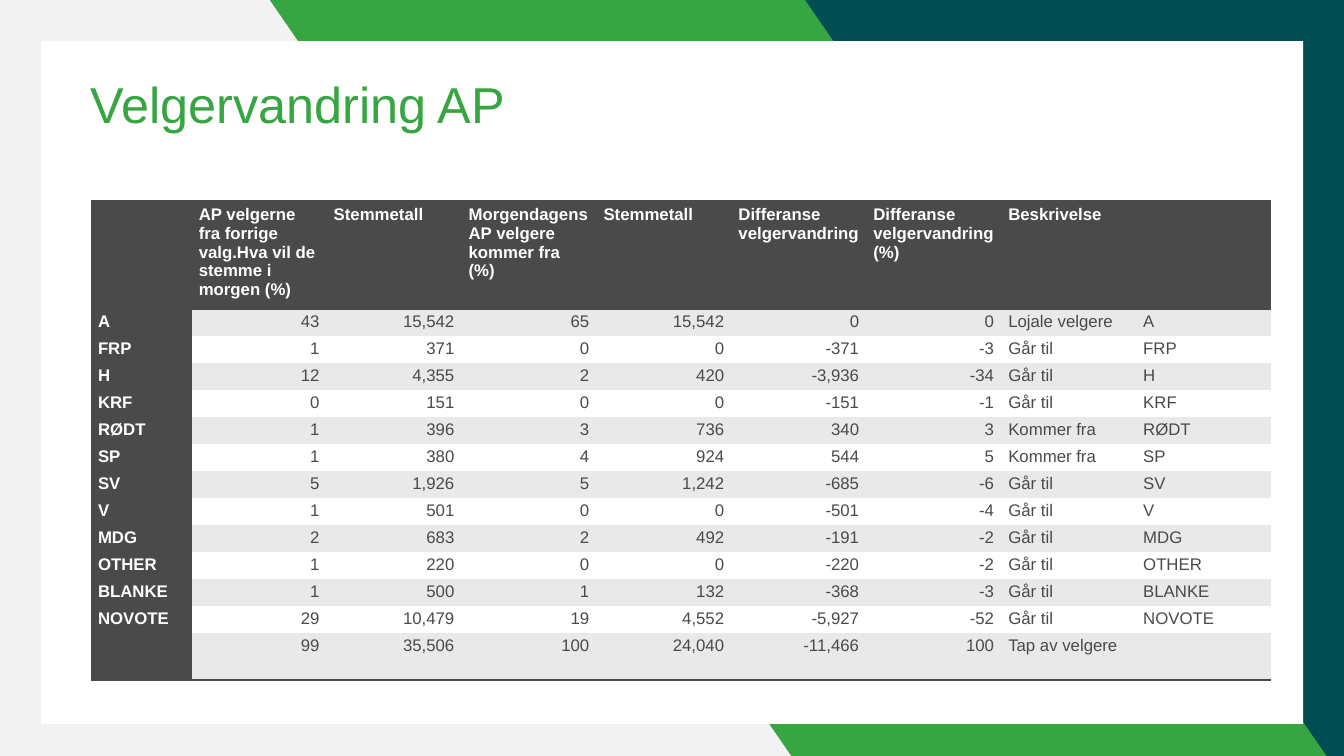
from lxml import etree
from pptx import Presentation
from pptx.dml.color import RGBColor
from pptx.enum.shapes import MSO_SHAPE
from pptx.enum.text import MSO_ANCHOR, MSO_AUTO_SIZE, PP_ALIGN
from pptx.oxml.ns import qn
from pptx.util import Cm, Pt

RECT, SLANT = MSO_SHAPE.RECTANGLE, MSO_SHAPE.PARALLELOGRAM
LEFT, CENTER, RIGHT = PP_ALIGN.LEFT, PP_ALIGN.CENTER, PP_ALIGN.RIGHT
FONT = "Arial"
PLAIN_STYLE = "{2D5ABB26-0587-4C30-8999-92F81FD0307C}"
COLORS = {"green": "37A541", "teal": "004E54", "light": "F2F2F2",
          "white": "FFFFFF", "dark": "4A4A4A", "band": "E9E9E9"}

TITLE = "Velgervandring AP"
BACKDROP = [
    (RECT, "light", 0, 0, 33.87, 19.15),
    (RECT, "teal", 20.17, 0, 13.7, 19.15),
    (SLANT, "green", 6.8, 0, 26.7, 19.15),
    (RECT, "white", 1.04, 1.04, 31.8, 17.2),
]
HEADER = ("", "AP velgerne fra forrige valg.Hva vil de stemme i morgen (%)",
          "Stemmetall", "Morgendagens AP velgere kommer fra (%)", "Stemmetall",
          "Differanse velgervandring", "Differanse velgervandring (%)",
          "Beskrivelse", "")
VOTERS = [
    ("A", "43", "15,542", "65", "15,542", "0", "0", "Lojale velgere", "A"),
    ("FRP", "1", "371", "0", "0", "-371", "-3", "Går til", "FRP"),
    ("H", "12", "4,355", "2", "420", "-3,936", "-34", "Går til", "H"),
    ("KRF", "0", "151", "0", "0", "-151", "-1", "Går til", "KRF"),
    ("RØDT", "1", "396", "3", "736", "340", "3", "Kommer fra", "RØDT"),
    ("SP", "1", "380", "4", "924", "544", "5", "Kommer fra", "SP"),
    ("SV", "5", "1,926", "5", "1,242", "-685", "-6", "Går til", "SV"),
    ("V", "1", "501", "0", "0", "-501", "-4", "Går til", "V"),
    ("MDG", "2", "683", "2", "492", "-191", "-2", "Går til", "MDG"),
    ("OTHER", "1", "220", "0", "0", "-220", "-2", "Går til", "OTHER"),
    ("BLANKE", "1", "500", "1", "132", "-368", "-3", "Går til", "BLANKE"),
    ("NOVOTE", "29", "10,479", "19", "4,552", "-5,927", "-52", "Går til", "NOVOTE"),
    ("", "99", "35,506", "100", "24,040", "-11,466", "100", "Tap av velgere", ""),
]
NUMBER_COLS = range(1, 7)
COL_WIDTHS = [2.54] + [3.4] * 8
ROW_HEIGHTS = [2.7] + [0.68] * 12 + [1.19]


def rgb(name):
    return RGBColor.from_string(COLORS[name])


def style_font(font, size, color, bold=False):
    font.name, font.size, font.bold = FONT, Pt(size), bold
    font.color.rgb = rgb(color)


def add_backdrop(s):
    for kind, color, x, y, w, h in BACKDROP:
        sp = s.shapes.add_shape(kind, Cm(x), Cm(y), Cm(w), Cm(h))
        sp.shadow.inherit = False
        sp.fill.solid()
        sp.fill.fore_color.rgb = rgb(color)
        sp.line.fill.background()
        if kind == SLANT:
            sp.adjustments[0] = 0.69
            sp._element.spPr.find(qn("a:xfrm")).set("flipH", "1")


def set_title(s):
    title = s.shapes.title
    s.shapes._spTree.append(title._element)
    title.left, title.top, title.width, title.height = Cm(1.5), Cm(1.4), Cm(12), Cm(2.1)
    tf = title.text_frame
    tf.text = TITLE
    tf.auto_size = MSO_AUTO_SIZE.NONE
    tf.vertical_anchor = MSO_ANCHOR.BOTTOM
    tf.margin_left = tf.margin_right = 0
    tf.margin_top = tf.margin_bottom = Cm(0.1)
    p = tf.paragraphs[0]
    p.alignment, p.line_spacing = CENTER, 0.9
    style_font(p.runs[0].font, 36, "green")


def add_border(cell, side):
    tag = qn(f"a:ln{side}")
    ln = etree.SubElement(cell._tc.get_or_add_tcPr(), tag, w=str(Pt(2)))
    fill = etree.SubElement(ln, qn("a:solidFill"))
    etree.SubElement(fill, qn("a:srgbClr"), val=COLORS["dark"])


def format_cell(cell, text, row, col):
    heading = row == 0 or col == 0
    sides = "TB" if row == 0 else "B" if row == len(VOTERS) else ""
    for side in sides:
        add_border(cell, side)
    cell.fill.solid()
    cell.fill.fore_color.rgb = rgb("dark" if heading else "band" if row % 2 else "white")
    cell.margin_left = cell.margin_right = Cm(0.18)
    cell.margin_top = cell.margin_bottom = Cm(0.09)
    cell.text = text
    p = cell.text_frame.paragraphs[0]
    p.alignment = RIGHT if row and col in NUMBER_COLS else LEFT
    for r in p.runs:
        style_font(r.font, 12, "white" if heading else "dark", heading)


def add_voter_table(s):
    rows = [HEADER] + VOTERS
    frame = s.shapes.add_table(len(rows), len(HEADER), Cm(2.29), Cm(5.08),
                               Cm(sum(COL_WIDTHS)), Cm(sum(ROW_HEIGHTS)))
    table = frame.table
    table._tbl.tblPr.find(qn("a:tableStyleId")).text = PLAIN_STYLE
    for column, width in zip(table.columns, COL_WIDTHS):
        column.width = Cm(width)
    for row, height in zip(table.rows, ROW_HEIGHTS):
        row.height = Cm(height)
    for i, values in enumerate(rows):
        for j, text in enumerate(values):
            format_cell(table.cell(i, j), text, i, j)


def main():
    prs = Presentation()
    prs.slide_width, prs.slide_height = Cm(33.87), Cm(19.05)
    s = prs.slides.add_slide(prs.slide_layouts[5])
    add_backdrop(s)
    set_title(s)
    add_voter_table(s)
    prs.save("out.pptx")


if __name__ == "__main__":
    main()
